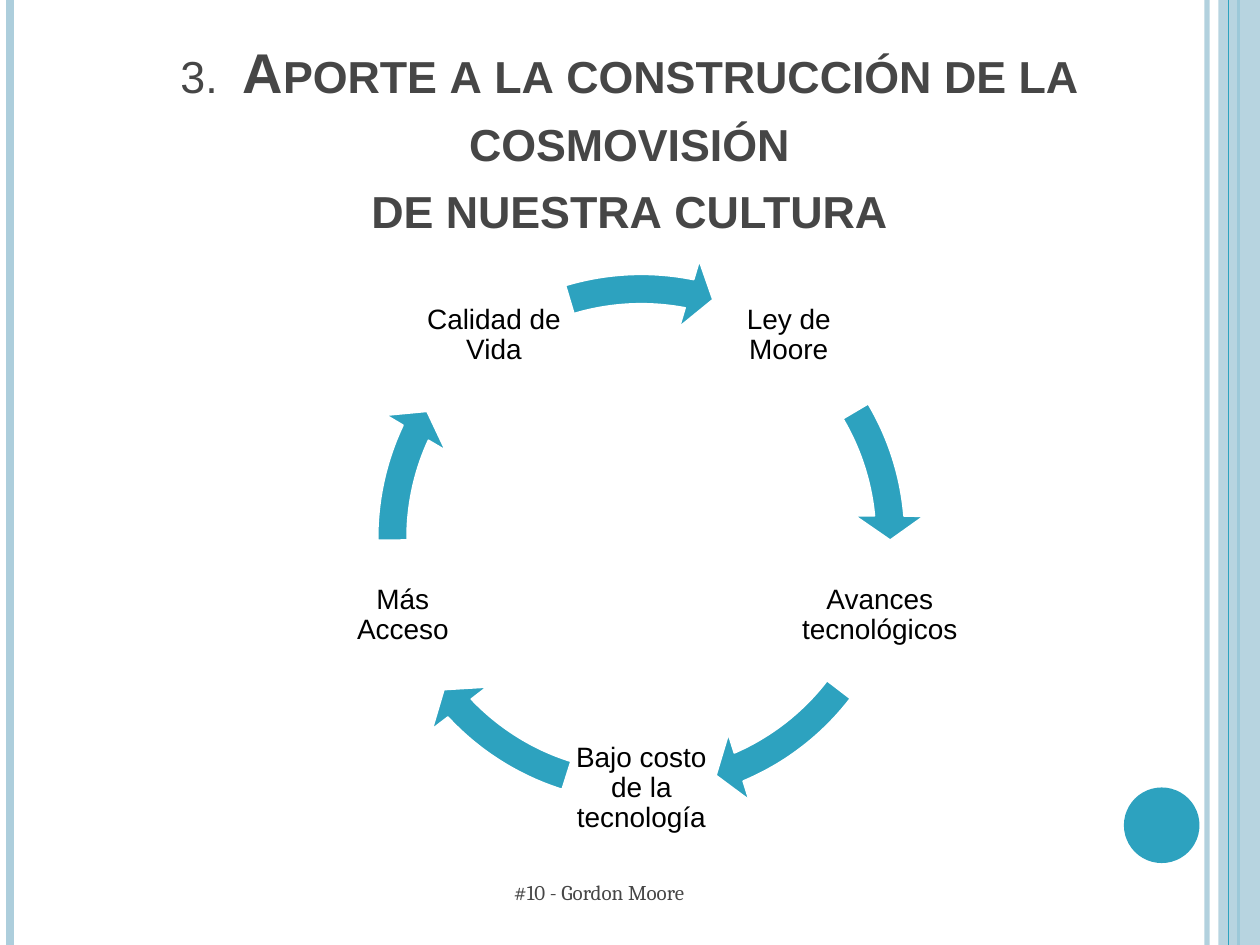
import math
from lxml import etree
from pptx import Presentation, util as u
from pptx.dml.color import RGBColor
from pptx.enum import shapes, text
from pptx.oxml.ns import qn

W, H = 10, 7.5
TEAL, PALE, GREY = "2DA2BF", "ADCEDC", "464646"
MID = text.MSO_ANCHOR.MIDDLE
CENTER = text.PP_ALIGN.CENTER

# Content: steps of the cycle: label, box width, angles where the next arrow ends and starts
STEPS = [
    ("Ley de Moore", 1.2, 212.95, 197.64),
    ("Avances tecnológicos", 1.64, 40.17, 22.51),
    ("Bajo costo de la tecnología", 1.2, 82.13, 64.48),
    ("Más Acceso", 1.2, 123, 107.69),
    ("Calidad de Vida", 1.2, 168.68, 151.97),
]
TITLE = [("3.  ", False),
         ("Aporte a la construcción de la cosmovisión\vde nuestra cultura", True)]
FOOT = [("#10 - Gordon Moore", False)]
# Vertical rules: x, colour, width, opacity
BACK = [(9.58, PALE, 3, 93), (0.08, PALE, 4.5, 100), (9.83, TEAL, 1.5, 100)]
FRONT = [(9.75, TEAL, 0.75, 100)]
MID_X, MID_Y, RADIUS, RING, BOX = 5.09, 4.27, 1.99, 4.5, 1.2

prs = Presentation()
prs.slide_width, prs.slide_height = u.Inches(W), u.Inches(H)
slide = prs.slides.add_slide(prs.slide_layouts[6])


def rgb(code):
    return RGBColor.from_string(code)


def fade(fill, share):
    if share < 100:
        tint = fill._xPr.find(qn("a:solidFill"))[0]
        etree.SubElement(tint, qn("a:alpha")).set("val", str(share * 1000))


def rule(x, color, width, share):
    line = slide.shapes.add_connector(
        shapes.MSO_CONNECTOR.STRAIGHT, u.Inches(x), 0, u.Inches(x), u.Inches(H))
    line.line.color.rgb = rgb(color)
    line.line.width = u.Pt(width)
    fade(line.line.fill, share)
    etree.SubElement(line._element.spPr, qn("a:effectLst"))


def shape(kind, box, color, edge=None, share=100):
    item = slide.shapes.add_shape(kind, *map(u.Inches, box))
    item.shadow.inherit = False
    item.fill.solid()
    item.fill.fore_color.rgb = rgb(color)
    fade(item.fill, share)
    if edge:
        item.line.color.rgb = rgb(edge)
        item.line.width = u.Pt(1)
    else:
        item.line.fill.background()
    return item


def label(box, runs, font, size, color, anchor=MID, align=None,
          pad=None, space=None, caps=False):
    frame = slide.shapes.add_textbox(*map(u.Inches, box)).text_frame
    frame.word_wrap = True
    frame.vertical_anchor = anchor
    if pad is not None:
        for side in ("left", "top", "right", "bottom"):
            setattr(frame, "margin_" + side, u.Inches(pad))
    para = frame.paragraphs[0]
    para.alignment, para.line_spacing = align, space
    for words, bold in runs:
        for n, part in enumerate(words.split("\v")):
            if n:
                para.add_line_break()
            run = para.add_run()
            run.text = part
            style = {"name": font, "size": u.Pt(size), "bold": bold}
            for key, value in style.items():
                setattr(run.font, key, value)
            run.font.color.rgb = rgb(color)
            if caps:
                run._r.get_or_add_rPr().set("cap", "small")


# Side bands and dot
for row in BACK:
    rule(*row)
shape(shapes.MSO_SHAPE.RECTANGLE, (9.67, 0, W - 9.67, H), PALE, share=87)
for row in FRONT:
    rule(*row)
shape(shapes.MSO_SHAPE.OVAL, (8.92, 6.25, 0.6, 0.6), TEAL)

# Title
label((0.23, 0.7, 9.53, 1.25), TITLE, "Arial", 32, GREY,
      text.MSO_ANCHOR.BOTTOM, CENTER, caps=True)

# Cycle: labels on a pentagon, arrows on one shared ring
ring = (MID_X - RING / 2, MID_Y - RING / 2, RING, RING)
for n, (name, wide, end, start) in enumerate(STEPS):
    turn = math.radians(-54 + n * 360 / len(STEPS))
    x = MID_X + RADIUS * math.cos(turn)
    y = MID_Y + RADIUS * math.sin(turn)
    label((x - wide / 2, y - BOX / 2, wide, BOX), [(name, False)],
          "Arial", 16, "000000", align=CENTER, pad=0.02, space=0.9)
    arrow = shape(shapes.MSO_SHAPE.CIRCULAR_ARROW, ring, TEAL, "FFFFFF")
    for k, value in enumerate((0.052, 3.354, end, start, 0.061)):
        arrow.adjustments[k] = value

# Footer
label((3.98, 6.88, 3.5, 0.4), FOOT, "Cambria", 12, GREY)

prs.save("out.pptx")
